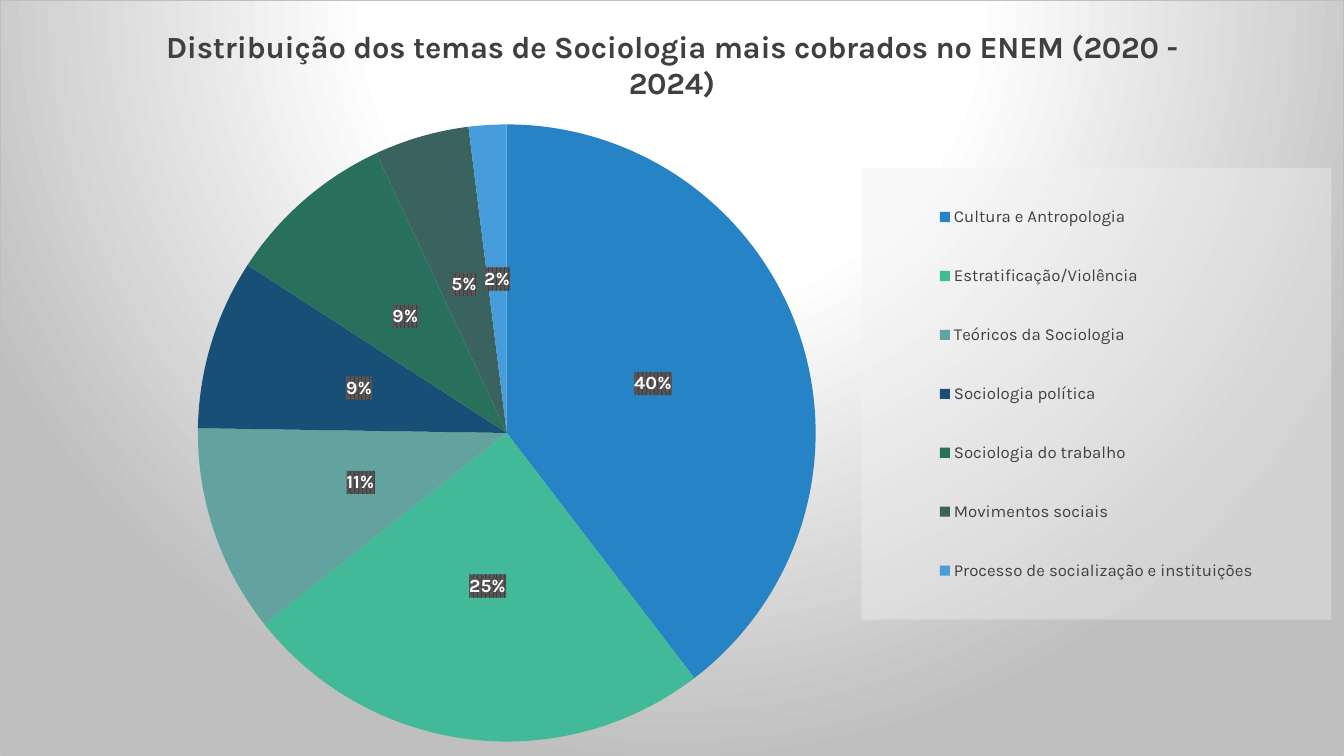
"""Build a slide with a pie chart of Sociology topics in the ENEM exam."""
from lxml import etree
from pptx import Presentation
from pptx.chart.data import CategoryChartData
from pptx.dml.color import RGBColor
from pptx.enum.chart import XL_CHART_TYPE, XL_LABEL_POSITION, XL_LEGEND_POSITION
from pptx.oxml.ns import qn
from pptx.util import Inches, Pt

PIE = XL_CHART_TYPE.PIE
LABEL_CENTER = XL_LABEL_POSITION.CENTER
LEGEND_RIGHT = XL_LEGEND_POSITION.RIGHT

FONT = "Karla"
TITLE = "Distribuição dos temas de Sociologia mais cobrados no ENEM (2020 - 2024)"
COLORS = {
    "text": "404040", "label": "FFFFFF", "base": "000000",
    "glow": "FFFFFF", "edge": "BFBFBF", "panel": "F2F2F2",
    "hatch": "404040", "hatch_back": "595959",
}
TOPICS = [
    ("Cultura e Antropologia", 40, "2683C6"),
    ("Estratificação/Violência", 25, "42BA97"),
    ("Teóricos da Sociologia", 11, "62A39F"),
    ("Sociologia política", 9, "174F77"),
    ("Sociologia do trabalho", 9, "28705B"),
    ("Movimentos sociais", 5, "3A6360"),
    ("Processo de socialização e instituições", 2, "479DDC"),
]
PIE_SHARE = (0.147, 0.164, 0.46, 0.818)
LEGEND_SHARE = (0.641, 0.222, 0.35, 0.598)

NAMESPACES = (
    'xmlns:c="http://schemas.openxmlformats.org/drawingml/2006/chart" '
    'xmlns:a="http://schemas.openxmlformats.org/drawingml/2006/main"'
)


def chart_xml(tag, content):
    """Return a chart element with the given inner XML."""
    return etree.fromstring(f"<c:{tag} {NAMESPACES}>{content}</c:{tag}>")


def solid(color, inner=""):
    """Return the XML of one RGB colour."""
    return f'<a:srgbClr val="{COLORS[color]}">{inner}</a:srgbClr>'


def style_font(font, size, color, bold=False):
    """Set typeface, size, colour and weight of a font."""
    font.name = FONT
    font.size = Pt(size)
    font.bold = bold
    font.color.rgb = RGBColor.from_string(COLORS[color])


def write_text(frame, text, **font_format):
    """Write one run of text with its format."""
    run = frame.paragraphs[0].add_run()
    run.text = text
    style_font(run.font, **font_format)


def place(element, index, shares, inner=False):
    """Give a chart part a fixed place as shares of the chart."""
    for layout in element.findall(qn("c:layout")):
        element.remove(layout)
    target = '<c:layoutTarget val="inner"/>' if inner else ""
    modes = "".join(f'<c:{axis}Mode val="edge"/>' for axis in "xy")
    sizes = "".join(f'<c:{side} val="{share}"/>' for side, share in zip("xywh", shares))
    manual = f"<c:manualLayout>{target}{modes}{sizes}</c:manualLayout>"
    element.insert(index, chart_xml("layout", manual))


def fill_background(chart):
    """Fill the chart area with a radial glow and a thin border."""
    stops = "".join(
        f'<a:gs pos="{position * 1000}">{solid(color)}</a:gs>'
        for position, color in ((0, "glow"), (39, "glow"), (100, "edge"))
    )
    area = chart_xml(
        "spPr",
        f'<a:gradFill><a:gsLst>{stops}</a:gsLst><a:path path="circle">'
        '<a:fillToRect l="50000" t="-80000" r="50000" b="180000"/></a:path></a:gradFill>'
        f'<a:ln w="{Pt(0.75)}"><a:solidFill>{solid("edge")}</a:solidFill></a:ln>',
    )
    body = chart.element.find(qn("c:chart"))
    body.addnext(area)
    corners = etree.Element(qn("c:roundedCorners"), val="0")
    body.addprevious(corners)


def add_title(chart):
    """Add the bold heading above the pie."""
    chart.has_title = True
    write_text(chart.chart_title.text_frame, TITLE, size=22, color="text", bold=True)
    chart.chart_title.include_in_layout = False


def add_legend(chart):
    """Add the topic legend on a translucent panel."""
    chart.has_legend = True
    legend = chart.legend
    legend.position = LEGEND_RIGHT
    legend.include_in_layout = False
    style_font(legend.font, 12, "text")
    element = chart.element.find(f".//{qn('c:legend')}")
    place(element, 1, LEGEND_SHARE)
    panel = solid("panel", '<a:alpha val="39000"/>')
    element.find(qn("c:txPr")).addprevious(
        chart_xml("spPr", f"<a:solidFill>{panel}</a:solidFill>"))


def add_labels(series):
    """Show percentages on hatched tags in the slices."""
    labels = series.data_labels
    labels.show_value = False
    labels.show_percentage = True
    labels.number_format = "0%"
    labels.number_format_is_linked = False
    labels.position = LABEL_CENTER
    style_font(labels.font, 13.3, "label", bold=True)
    hatch = (
        f'<a:pattFill prst="pct75"><a:fgClr>{solid("hatch")}</a:fgClr>'
        f'<a:bgClr>{solid("hatch_back")}</a:bgClr></a:pattFill>'
    )
    element = series.format.element if hasattr(series.format, "element") else None
    element = labels.font and chart_labels(series)
    element.find(qn("c:txPr")).addprevious(chart_xml("spPr", hatch))


def chart_labels(series):
    """Return the label element of a series."""
    return series.points[0].data_label and series._element.find(qn("c:dLbls"))


def color_slices(series):
    """Give each topic its slice colour without an outline."""
    for index, (_, _, color) in enumerate(TOPICS):
        slice_format = series.points[index].format
        slice_format.fill.solid()
        slice_format.fill.fore_color.rgb = RGBColor.from_string(color)
        slice_format.line.fill.background()


def add_topic_pie(slide, width, height):
    """Add the full-slide pie chart of topics."""
    topics = CategoryChartData()
    topics.categories = [name for name, _, _ in TOPICS]
    topics.add_series(TITLE, [share for _, share, _ in TOPICS])
    chart = slide.shapes.add_chart(PIE, 0, 0, width, height, topics).chart
    style_font(chart.font, 10, "base")
    add_title(chart)
    add_legend(chart)
    plot = chart.plots[0]
    plot.vary_by_categories = True
    color_slices(plot.series[0])
    add_labels(plot.series[0])
    place(chart.element.find(f".//{qn('c:plotArea')}"), 0, PIE_SHARE, inner=True)
    fill_background(chart)


def main():
    """Build and save the slide."""
    deck = Presentation()
    deck.slide_width, deck.slide_height = Inches(13.33), Inches(7.5)
    slide = deck.slides.add_slide(deck.slide_layouts[6])
    add_topic_pie(slide, deck.slide_width, deck.slide_height)
    deck.save("out.pptx")


if __name__ == "__main__":
    main()
